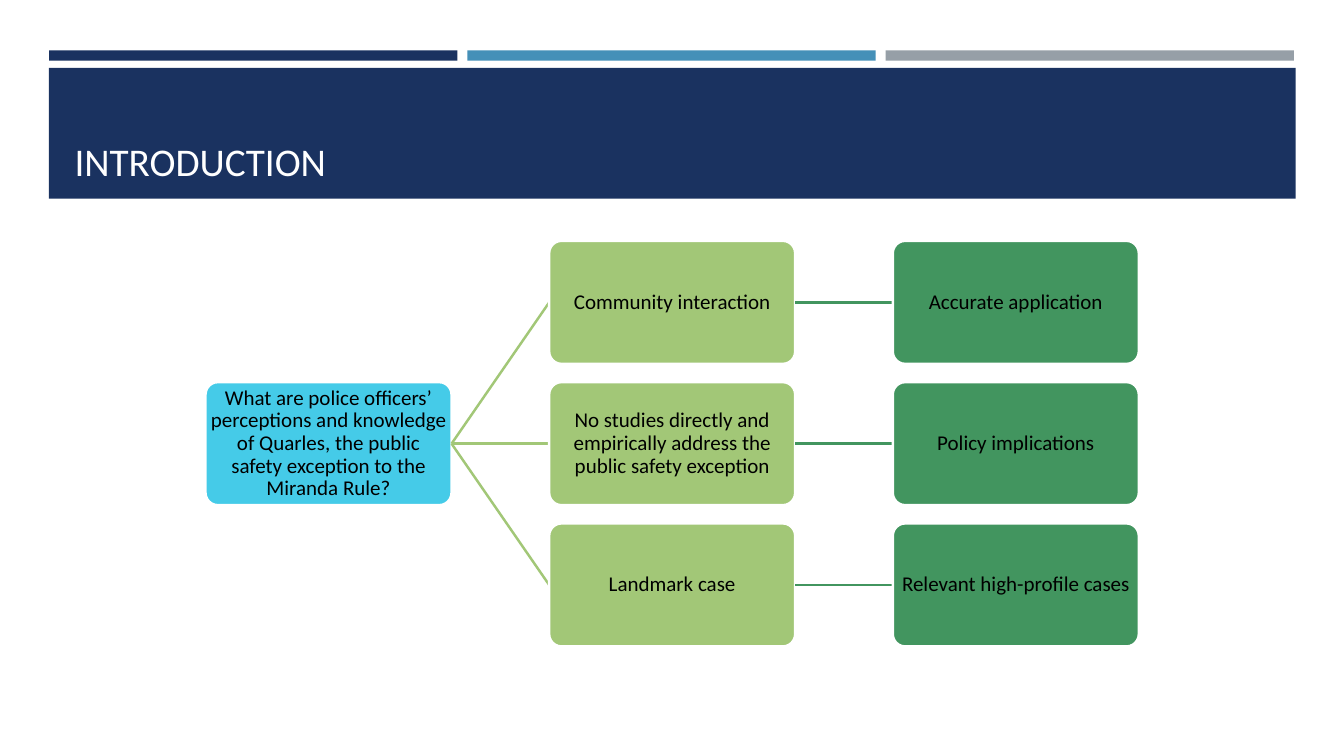
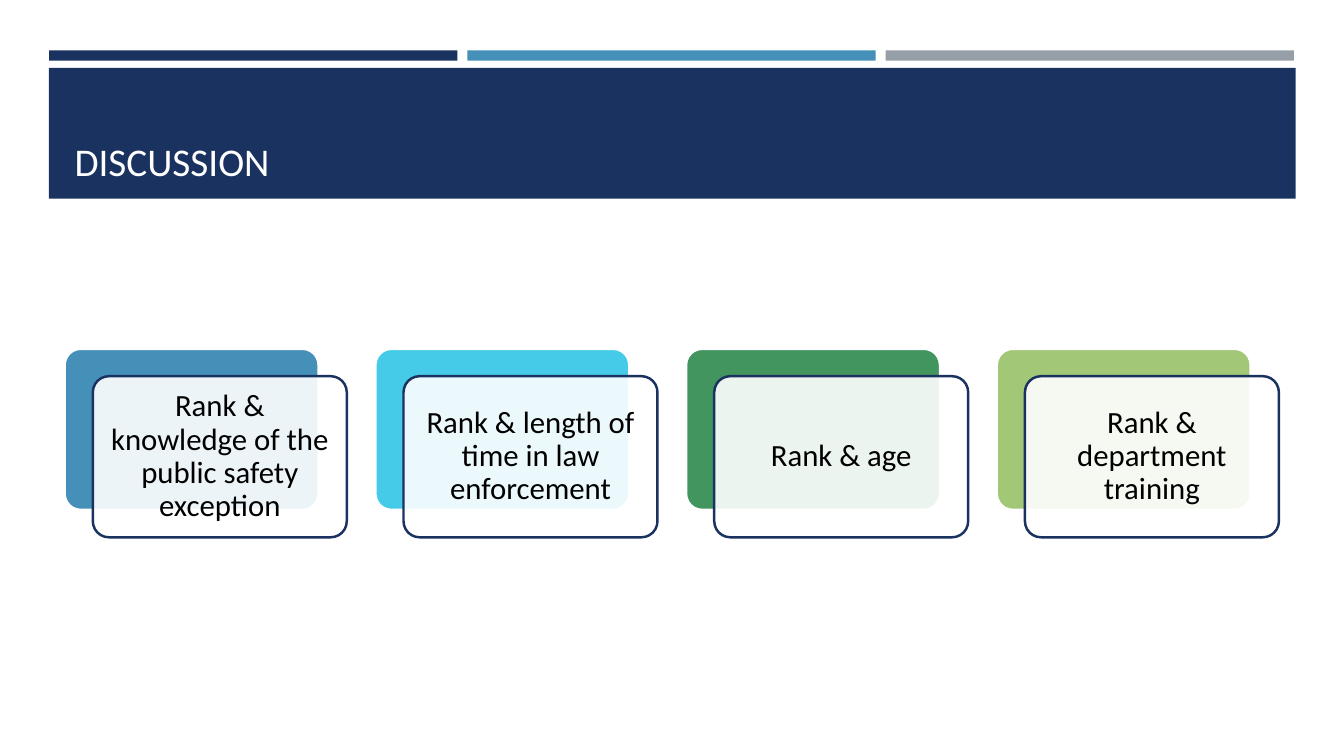
from lxml.etree import SubElement
from pptx import Presentation
from pptx.dml.color import RGBColor
from pptx.enum.shapes import MSO_CONNECTOR as CONNECTOR, MSO_SHAPE as SHAPE
from pptx.enum.text import MSO_ANCHOR as ANCHOR, PP_ALIGN as ALIGN
from pptx.oxml.ns import qn
from pptx.util import Cm, Pt

NAVY, BLUE, GRAY = "1A3260", "4590B8", "969FA7"
CYAN, GREEN, LIME = "45CBE8", "42955F", "A2C777"
WHITE, BLACK = "FFFFFF", "000000"
LINE_WIDTH = Pt(1.75)
LEFT_SITE, RIGHT_SITE = 1, 3

TITLE = {
    "frame": {"vertical_anchor": ANCHOR.BOTTOM},
    "paragraph": {"alignment": ALIGN.LEFT},
    "font": {"size": Pt(28)},
    "color": WHITE,
}
TREE = {
    "frame": dict.fromkeys(
        ["margin_left", "margin_right", "margin_top", "margin_bottom"], Cm(0.02)
    ),
    "paragraph": {"alignment": ALIGN.CENTER, "line_spacing": 0.9},
    "font": {"size": Pt(15)},
    "color": BLACK,
}
CARD = {
    "frame": dict.fromkeys(
        ["margin_left", "margin_right", "margin_top", "margin_bottom"], Cm(0.23)
    ),
    "paragraph": TREE["paragraph"],
    "font": {"size": Pt(22)},
    "color": BLACK,
}


def paint(fill, color):
    fill.solid()
    fill.fore_color.rgb = RGBColor.from_string(color)


def add_block(slide, kind, box, fill=None, line=None, text=None, style=None):
    shape = slide.shapes.add_shape(kind, *[Cm(length) for length in box])
    shape.shadow.inherit = False
    if kind == SHAPE.ROUNDED_RECTANGLE:
        shape.adjustments[0] = 0.1
    if fill:
        paint(shape.fill, fill)
    else:
        shape.fill.background()
    if line:
        paint(shape.line.fill, line)
        shape.line.width = LINE_WIDTH
    else:
        shape.line.fill.background()
    if text:
        frame = shape.text_frame
        frame.text = text
        frame.word_wrap = True
        paragraph = frame.paragraphs[0]
        font = paragraph.runs[0].font
        font.name = "Calibri"
        paint(font.fill, style["color"])
        for target, values in [
            (frame, style["frame"]),
            (paragraph, style["paragraph"]),
            (font, style["font"]),
        ]:
            for name, value in values.items():
                setattr(target, name, value)
    return shape


presentation = Presentation()
presentation.slide_width, presentation.slide_height = Cm(33.87), Cm(19.05)

slides = []
for title in ["INTRODUCTION", "DISCUSSION"]:
    slide = presentation.slides.add_slide(presentation.slide_layouts[6])
    for index, color in enumerate([NAVY, BLUE, GRAY]):
        add_block(slide, SHAPE.RECTANGLE, (1.24 + 10.54 * index, 1.27, 10.29, 0.26), color)
    add_block(slide, SHAPE.RECTANGLE, (1.23, 1.71, 31.42, 3.3), NAVY)
    add_block(slide, SHAPE.RECTANGLE, (1.63, 1.96, 30.63, 2.82), text=title, style=TITLE)
    slides.append(slide)
introduction, discussion = slides

node_left, node_top, node_width, node_height = 5.18, 6.07, 6.2, 3.1
column_step, row_step = 8.66, 3.56
branches = [
    ("Community interaction", "Accurate application"),
    ("No studies directly and empirically address the public safety exception",
     "Policy implications"),
    ("Landmark case", "Relevant high-profile cases"),
]
question = add_block(
    introduction,
    SHAPE.ROUNDED_RECTANGLE,
    (node_left, node_top + row_step, node_width, node_height),
    CYAN,
    WHITE,
    "What are police officers’ perceptions and knowledge of Quarles, "
    "the public safety exception to the Miranda Rule?",
    TREE,
)
for row, branch in enumerate(branches):
    parent = question
    for column, (text, color) in enumerate(zip(branch, [LIME, GREEN]), start=1):
        connector = introduction.shapes.add_connector(CONNECTOR.STRAIGHT, 0, 0, 0, 0)
        SubElement(connector.element.spPr, qn("a:effectLst"))
        paint(connector.line.fill, color)
        connector.line.width = LINE_WIDTH
        box = (node_left + column_step * column, node_top + row_step * row,
               node_width, node_height)
        node = add_block(introduction, SHAPE.ROUNDED_RECTANGLE, box, color, WHITE, text, TREE)
        connector.begin_connect(parent, RIGHT_SITE)
        connector.end_connect(node, LEFT_SITE)
        parent = node

card_width, card_height = 6.4, 4.06
findings = [
    ("Rank & knowledge of the public safety exception", BLUE),
    ("Rank & length of time in law enforcement", CYAN),
    ("Rank & age", GREEN),
    ("Rank & department training", LIME),
]
for index, (text, color) in enumerate(findings):
    left, top = 1.63 + 7.83 * index, 8.79
    add_block(discussion, SHAPE.ROUNDED_RECTANGLE,
              (left, top, card_width, card_height), color, WHITE)
    card = add_block(discussion, SHAPE.ROUNDED_RECTANGLE,
                     (left + 0.71, top + 0.69, card_width, card_height),
                     WHITE, NAVY, text, CARD)
    fill_color = card.element.spPr.find(qn("a:solidFill")).find(qn("a:srgbClr"))
    SubElement(fill_color, qn("a:alpha"), val="90000")

presentation.save("out.pptx")
